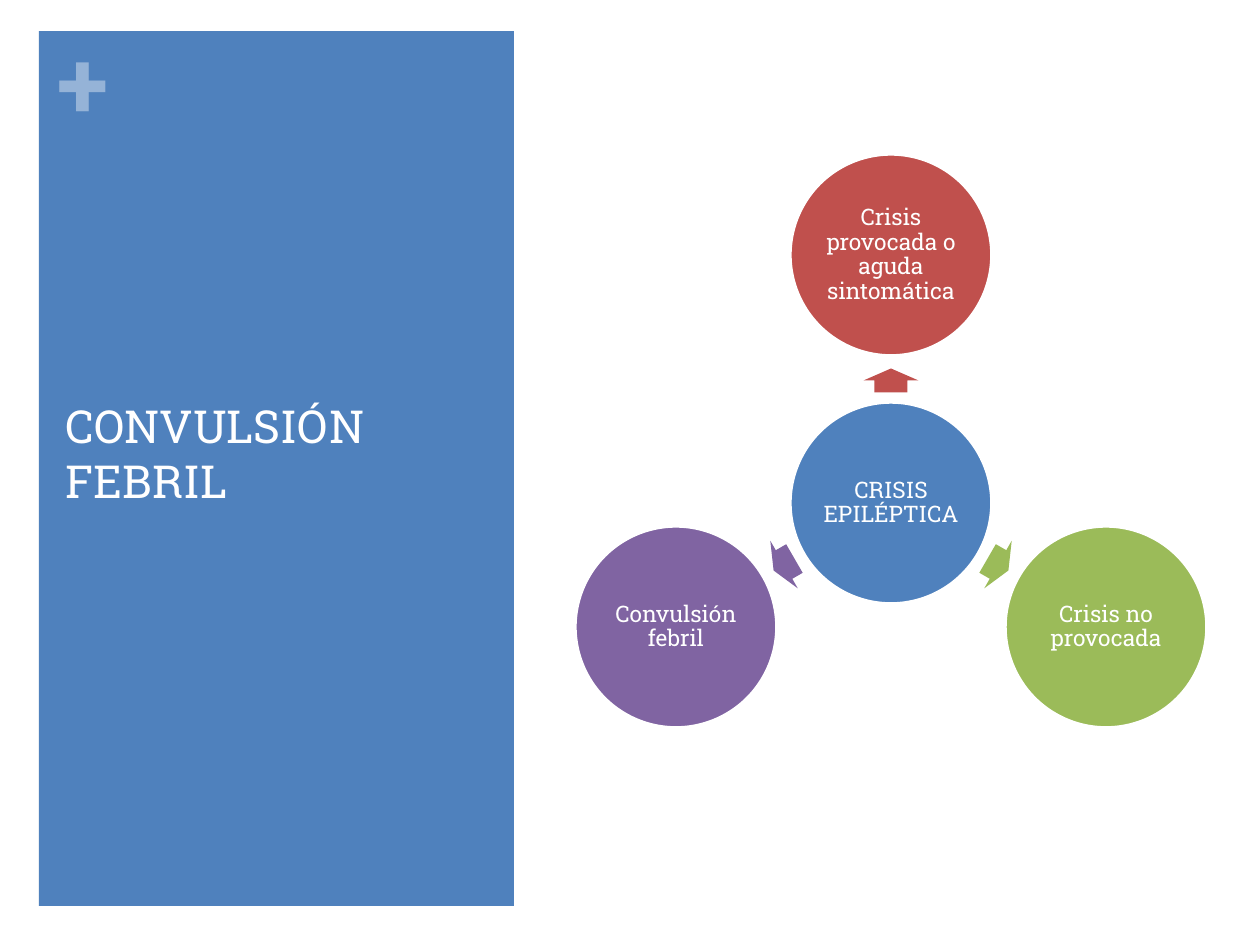
from dataclasses import dataclass
from math import cos, radians, sin

from pptx import Presentation
from pptx.dml.color import RGBColor
from pptx.enum.shapes import MSO_SHAPE as Preset
from pptx.enum.text import MSO_ANCHOR as Anchor, MSO_AUTO_SIZE as AutoSize, PP_ALIGN as Align
from pptx.util import Emu, Pt

PX_PER_INCH = 126
FONT = "Roboto Slab"
WHITE = "FFFFFF"
BLUE = "4F81BD"
PALE_BLUE = "95B3D7"

HUB_X, HUB_Y = 891, 503
DIAMETER = 202
ORBIT = 248
ARROW_ORBIT = 123
ARROW_LENGTH, ARROW_BREADTH = 24, 55
TEXT_INSET = 3


@dataclass
class Crisis:
    label: str
    color: str
    angle: int


BRANCHES = [
    Crisis("Crisis provocada o aguda sintomática", "C0504D", 270),
    Crisis("Crisis no provocada", "9BBB59", 30),
    Crisis("Convulsión febril", "8064A2", 150),
]


def px(length: int) -> Emu:
    return Emu(round(length * 914400 / PX_PER_INCH))


def rgb(color: str) -> RGBColor:
    return RGBColor.from_string(color)


def around_hub(angle: int, distance: int) -> tuple[int, int]:
    return (round(HUB_X + distance * cos(radians(angle))),
            round(HUB_Y + distance * sin(radians(angle))))


def set_insets(frame, inset: int) -> None:
    frame.margin_left = frame.margin_right = px(inset)
    frame.margin_top = frame.margin_bottom = px(inset)


def add_text(frame, text: str, size: int, color: str, align: Align, bold: bool = False) -> None:
    frame.word_wrap = True
    paragraph = frame.paragraphs[0]
    paragraph.alignment = align
    run = paragraph.add_run()
    run.text = text
    run.font.name = FONT
    run.font.size = Pt(size)
    run.font.bold = bold
    run.font.color.rgb = rgb(color)


def add_filled(slide, preset: Preset, left: int, top: int, width: int, height: int, color: str):
    filled = slide.shapes.add_shape(preset, px(left), px(top), px(width), px(height))
    filled.shadow.inherit = False
    filled.fill.solid()
    filled.fill.fore_color.rgb = rgb(color)
    filled.line.fill.background()
    return filled


def add_circle(slide, center: tuple[int, int], label: str, color: str) -> None:
    x, y = center
    circle = add_filled(slide, Preset.OVAL, x - DIAMETER // 2, y - DIAMETER // 2,
                        DIAMETER, DIAMETER, color)
    circle.line.color.rgb = rgb(WHITE)
    circle.line.width = Pt(2)
    frame = circle.text_frame
    set_insets(frame, TEXT_INSET)
    frame.vertical_anchor = Anchor.MIDDLE
    add_text(frame, label, 13, WHITE, Align.CENTER)
    frame.paragraphs[0].line_spacing = 0.9


def add_arrow(slide, branch: Crisis) -> None:
    x, y = around_hub(branch.angle, ARROW_ORBIT)
    arrow = add_filled(slide, Preset.RIGHT_ARROW, x - ARROW_LENGTH // 2, y - ARROW_BREADTH // 2,
                       ARROW_LENGTH, ARROW_BREADTH, branch.color)
    arrow.adjustments[0] = 0.6
    arrow.adjustments[1] = 0.5
    arrow.rotation = branch.angle


def add_plus(slide) -> None:
    plus = slide.shapes.add_textbox(px(58), px(24), px(57), px(115))
    set_insets(plus.text_frame, 0)
    add_text(plus.text_frame, "+", 54, PALE_BLUE, Align.LEFT, bold=True)


def place_title(slide) -> None:
    title = slide.shapes.title
    title.left, title.top, title.width, title.height = px(53), px(354), px(449), px(160)
    frame = title.text_frame
    frame.auto_size = AutoSize.NONE
    frame.vertical_anchor = Anchor.BOTTOM
    add_text(frame, "CONVULSIÓN FEBRIL", 26, WHITE, Align.LEFT)
    slide.shapes._spTree.append(title._element)


def main() -> None:
    deck = Presentation()
    deck.slide_width, deck.slide_height = px(1260), px(945)
    slide = deck.slides.add_slide(deck.slide_layouts[5])

    add_filled(slide, Preset.RECTANGLE, 39, 31, 475, 875, BLUE)
    add_plus(slide)
    place_title(slide)
    add_circle(slide, (HUB_X, HUB_Y), "CRISIS EPILÉPTICA", BLUE)
    for branch in BRANCHES:
        add_arrow(slide, branch)
        add_circle(slide, around_hub(branch.angle, ORBIT), branch.label, branch.color)

    deck.save("out.pptx")


if __name__ == "__main__":
    main()
